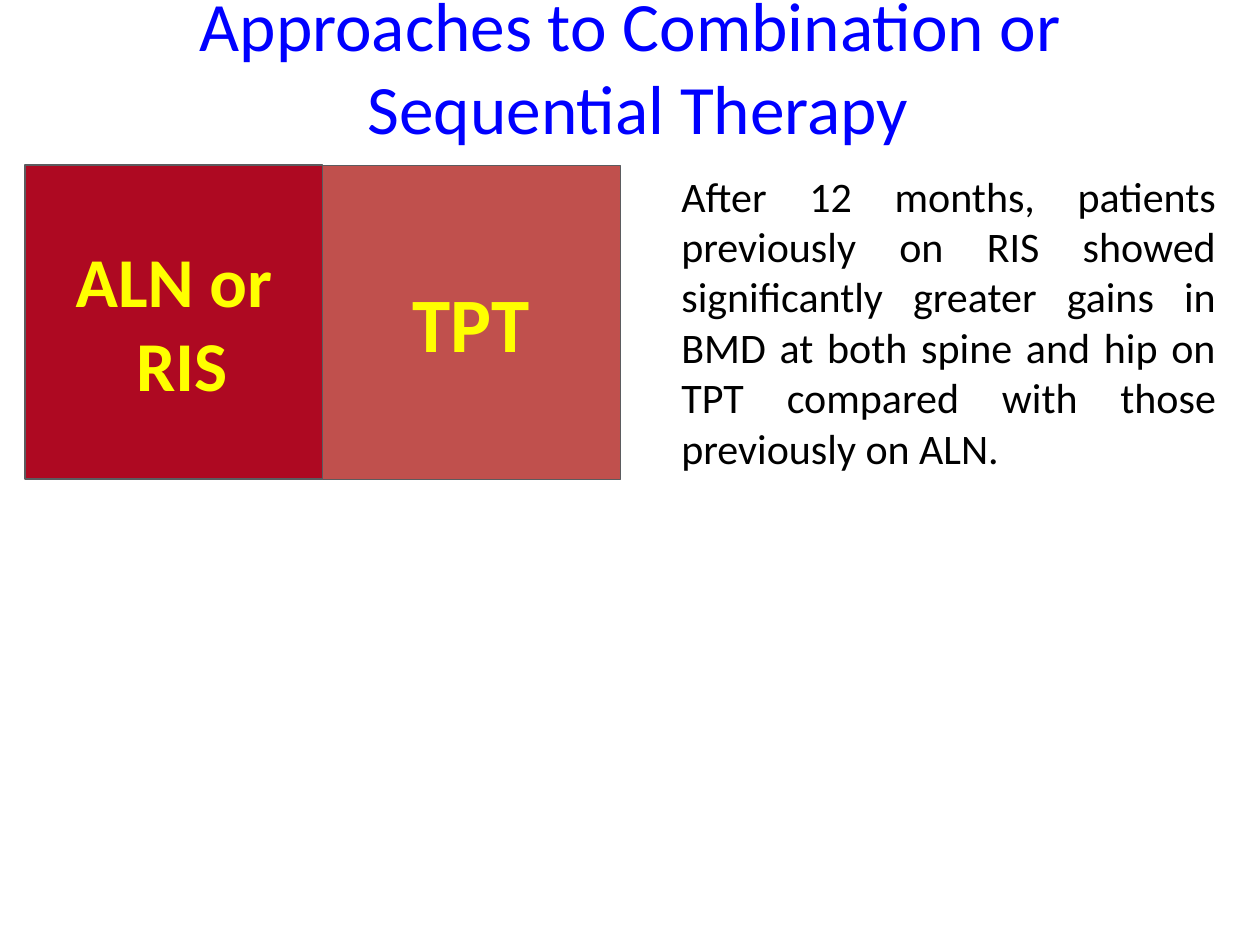
from pptx import Presentation
from pptx import util as u
from pptx.dml.color import RGBColor
from pptx.enum import shapes, text

Pt = u.Pt
BLUE = RGBColor(0x00, 0x00, 0xFF)
BLACK = RGBColor(0x00, 0x00, 0x00)
YELLOW = RGBColor(0xFF, 0xFF, 0x00)
CRIMSON = RGBColor(0xAE, 0x09, 0x22)
BRICK = RGBColor(0xC0, 0x50, 0x4D)
GREY = RGBColor(0x5B, 0x5C, 0x5F)

# Content
TITLE = "Approaches to Combination or \vSequential Therapy"
FINDING = ("After 12 months, patients previously on RIS showed significantly "
           "greater gains in BMD at both spine and hip on TPT compared with "
           "those previously on ALN.")
# Therapies in sequence: label, text size, fill, outline width
THERAPIES = [
    ("ALN or\n RIS", 40, CRIMSON, 1),
    ("TPT", 44, BRICK, 0.25),
]

# Layout, in points
TITLE_BOX = (34.56, 3.6, 660.24, 67.68)
FINDING_BOX = (382.32, 93.6, 319.68, 181.44)
BLOCK_LEFT, BLOCK_TOP, BLOCK_WIDTH, BLOCK_HEIGHT = 14.4, 94.32, 169.92, 179.28


def write(frame, words, size, color, align, bold=False):
    frame.text = words
    for paragraph in frame.paragraphs:
        paragraph.alignment = align
        font = paragraph.font
        font.name, font.size, font.bold = "Calibri", Pt(size), bold
        font.color.rgb = color


prs = Presentation()
prs.slide_width, prs.slide_height = Pt(720), Pt(540)
slide = prs.slides.add_slide(prs.slide_layouts[6])
CENTER, JUSTIFY = text.PP_ALIGN.CENTER, text.PP_ALIGN.JUSTIFY
MIDDLE = text.MSO_ANCHOR.MIDDLE

# Title
title = slide.shapes.add_textbox(*map(Pt, TITLE_BOX)).text_frame
title.word_wrap = True
title.vertical_anchor = MIDDLE
write(title, TITLE, 39.6, BLUE, CENTER)

# Finding beside the therapy blocks
finding = slide.shapes.add_textbox(*map(Pt, FINDING_BOX)).text_frame
finding.word_wrap = True
finding.auto_size = text.MSO_AUTO_SIZE.SHAPE_TO_FIT_TEXT
write(finding, FINDING, 24, BLACK, JUSTIFY)

# Therapy blocks, side by side; the first lies on top
sequence = slide.shapes.add_group_shape()
for step, (label, size, fill, outline) in reversed(list(enumerate(THERAPIES))):
    block = sequence.shapes.add_shape(
        shapes.MSO_SHAPE.RECTANGLE,
        Pt(BLOCK_LEFT + step * BLOCK_WIDTH), Pt(BLOCK_TOP),
        Pt(BLOCK_WIDTH), Pt(BLOCK_HEIGHT))
    block.shadow.inherit = False
    block.fill.solid()
    block.fill.fore_color.rgb = fill
    block.line.color.rgb = GREY
    block.line.width = Pt(outline)
    block.text_frame.word_wrap = False
    block.text_frame.vertical_anchor = MIDDLE
    write(block.text_frame, label, size, YELLOW, CENTER, bold=True)

prs.save("out.pptx")
